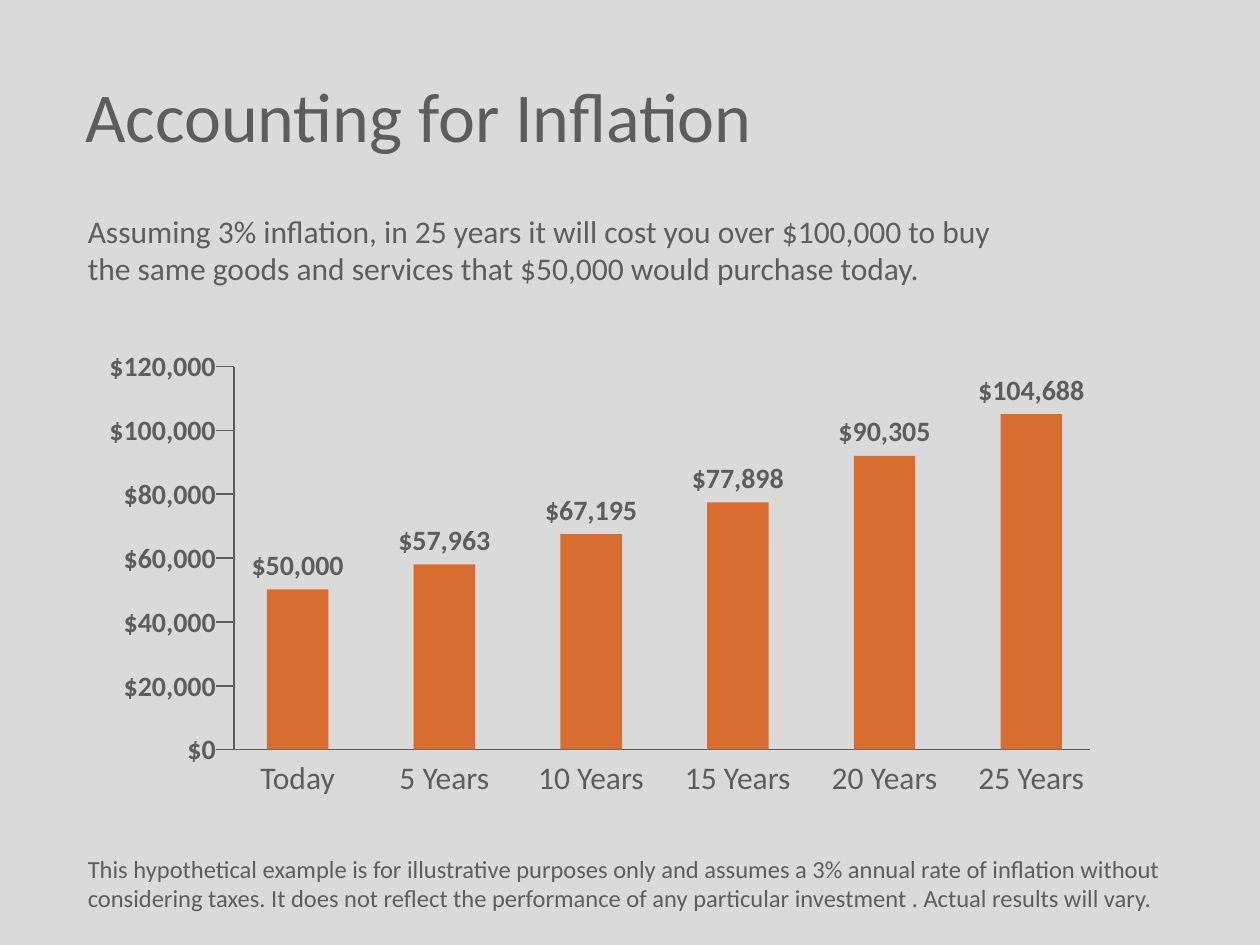
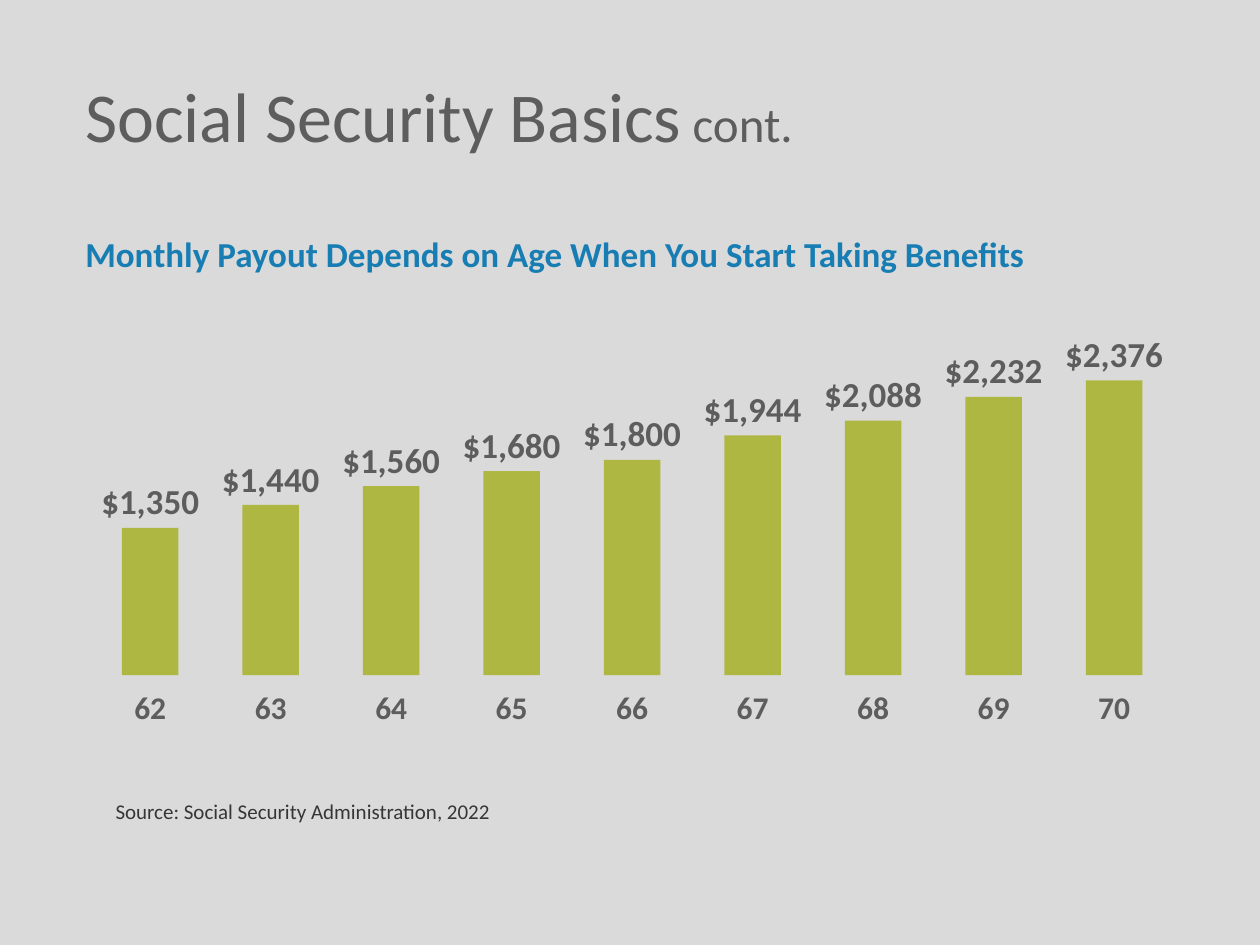
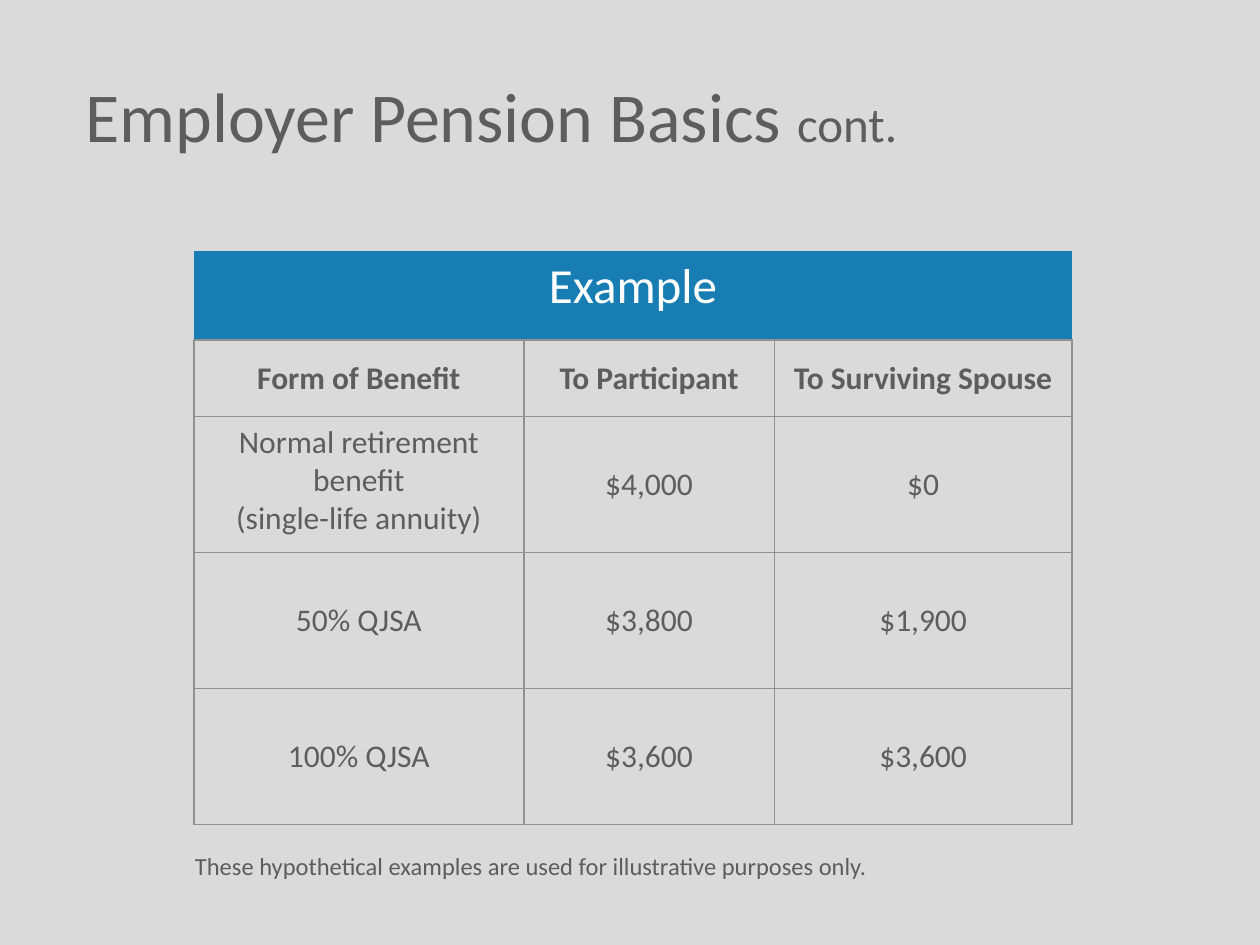
from dataclasses import dataclass

from lxml import etree
from pptx import Presentation
from pptx import util as u
from pptx.dml.color import RGBColor
from pptx.enum import shapes, text
from pptx.oxml import ns

FONT = "Calibri"
GREY = RGBColor(0x5D, 0x5D, 0x5D)
DARK = RGBColor(0x36, 0x36, 0x36)
BLUE = RGBColor(0x17, 0x7D, 0xB3)
ORANGE = RGBColor(0xD7, 0x6D, 0x31)
GREEN = RGBColor(0xAF, 0xB7, 0x43)
WHITE = RGBColor(0xFF, 0xFF, 0xFF)
BORDER = RGBColor(0x91, 0x91, 0x91)
BACKGROUND = RGBColor(0xDA, 0xDA, 0xDA)

LEFT, CENTER, RIGHT = text.PP_ALIGN.LEFT, text.PP_ALIGN.CENTER, text.PP_ALIGN.RIGHT

COSTS = [
    ("Today", "$50,000", 3.23),
    ("5 Years", "$57,963", 3.73),
    ("10 Years", "$67,195", 4.34),
    ("15 Years", "$77,898", 4.98),
    ("20 Years", "$90,305", 5.92),
    ("25 Years", "$104,688", 6.76),
]
PAYOUTS = [
    ("62", "$1,350", 2.97),
    ("63", "$1,440", 3.43),
    ("64", "$1,560", 3.81),
    ("65", "$1,680", 4.11),
    ("66", "$1,800", 4.34),
    ("67", "$1,944", 4.83),
    ("68", "$2,088", 5.13),
    ("69", "$2,232", 5.61),
    ("70", "$2,376", 5.94),
]
BENEFITS = [
    ("Form of Benefit", "To Participant", "To Surviving Spouse"),
    ("Normal retirement benefit\n(single-life annuity)", "$4,000", "$0"),
    ("50% QJSA", "$3,800", "$1,900"),
    ("100% QJSA", "$3,600", "$3,600"),
]


@dataclass
class BarStyle:
    color: RGBColor
    first: float
    last: float
    width: float
    base: float
    value_size: int
    value_lift: float
    caption_top: float
    caption_bold: bool


COST_STYLE = BarStyle(ORANGE, 5.38, 20.17, 1.24, 15.11, 16, 0.97, 15.16, False)
PAYOUT_STYLE = BarStyle(GREEN, 2.46, 21.89, 1.14, 13.61, 20, 1.09, 13.75, True)


def set_font(font, size, color=GREY, bold=False):
    font.name = FONT
    font.size = u.Pt(size)
    font.bold = bold
    font.color.rgb = color


def add_text(page, words, left, top, width, height, size,
             color=GREY, bold=False, align=LEFT):
    box = page.shapes.add_textbox(u.Cm(left), u.Cm(top), u.Cm(width), u.Cm(height))
    box.text_frame.word_wrap = True
    para = box.text_frame.paragraphs[0]
    para.text = words
    para.alignment = align
    set_font(para.font, size, color, bold)
    return box


def add_page(deck, title, suffix=""):
    page = deck.slides.add_slide(deck.slide_layouts[6])
    box = add_text(page, title, 1.47, 1.47, 25.4, 1.68, 40)
    box.text_frame.vertical_anchor = text.MSO_ANCHOR.MIDDLE
    if suffix:
        span = box.text_frame.paragraphs[0].add_run()
        span.text = suffix
        span.font.size = u.Pt(28)
    return page


def add_line(page, x1, y1, x2, y2):
    line = page.shapes.add_connector(
        shapes.MSO_CONNECTOR.STRAIGHT, u.Cm(x1), u.Cm(y1), u.Cm(x2), u.Cm(y2))
    line.line.color.rgb = GREY
    line.line.width = u.Pt(1)
    etree.SubElement(line._element.spPr, ns.qn("a:effectLst"))


def add_bars(page, entries, style):
    pitch = (style.last - style.first) / (len(entries) - 1)
    label_width = 3.2 if style.value_size == 16 else 2.5
    for index, (caption, value, height) in enumerate(entries):
        left = style.first + index * pitch
        top = style.base - height
        bar = page.shapes.add_shape(
            shapes.MSO_SHAPE.RECTANGLE,
            u.Cm(left), u.Cm(top), u.Cm(style.width), u.Cm(height))
        bar.shadow.inherit = False
        bar.fill.solid()
        bar.fill.fore_color.rgb = style.color
        bar.line.fill.background()
        label_left = left + (style.width - label_width) / 2
        add_text(page, value, label_left, top - style.value_lift, label_width, 0.94,
                 style.value_size, bold=True, align=CENTER)
        add_text(page, caption, label_left, style.caption_top, label_width, 1.02,
                 18, bold=style.caption_bold, align=CENTER)


def add_cost_axes(page):
    axis, top, base, steps = 4.72, 7.39, 15.11, 6
    add_line(page, axis, base, 21.97, base)
    add_line(page, axis, base, axis, top)
    for step in range(steps + 1):
        y = base - step * (base - top) / steps
        add_line(page, axis - 0.36, y, axis, y)
        add_text(page, f"${step * 20000:,}", 1.4, y - 0.48, 3.2, 0.94,
                 16, bold=True, align=RIGHT)


def set_borders(cell, visible):
    properties = cell._tc.get_or_add_tcPr()
    for side in "LRTB":
        line = etree.SubElement(properties, ns.qn(f"a:ln{side}"), w=str(u.Pt(1)))
        if side in visible:
            fill = etree.SubElement(line, ns.qn("a:solidFill"))
            etree.SubElement(fill, ns.qn("a:srgbClr"), val=str(BORDER))
        else:
            etree.SubElement(line, ns.qn("a:noFill"))


def fill_cell(cell, words, size, color, bold, anchor):
    cell.text = words
    cell.vertical_anchor = anchor
    for para in cell.text_frame.paragraphs:
        para.alignment = CENTER
        set_font(para.font, size, color, bold)


def add_benefit_table(page):
    widths = (6.65, 5.05, 6.0)
    heights = (1.8, 1.55, 2.74, 2.74, 2.74)
    table = page.shapes.add_table(
        len(heights), len(widths), u.Cm(3.91), u.Cm(5.05),
        u.Cm(sum(widths)), u.Cm(sum(heights))).table
    table.first_row = table.horz_banding = False
    for column, width in zip(table.columns, widths):
        column.width = u.Cm(width)
    for row, height in zip(table.rows, heights):
        row.height = u.Cm(height)

    heading = table.cell(0, 0)
    heading.merge(table.cell(0, len(widths) - 1))
    fill_cell(heading, "Example", 28, WHITE, False, text.MSO_ANCHOR.TOP)
    for cell in table.rows[0].cells:
        set_borders(cell, "B")
        cell.fill.solid()
        cell.fill.fore_color.rgb = BLUE

    for row_index, entries in enumerate(BENEFITS, start=1):
        for column_index, words in enumerate(entries):
            cell = table.cell(row_index, column_index)
            anchor = text.MSO_ANCHOR.TOP if "\n" in words else text.MSO_ANCHOR.MIDDLE
            fill_cell(cell, words, 18, GREY, row_index == 1, anchor)
            set_borders(cell, "LRTB")
            cell.fill.background()


def build_inflation(deck):
    page = add_page(deck, "Accounting for Inflation")
    add_text(page, "Assuming 3% inflation, in 25 years it will cost you over $100,000 "
             "to buy the same goods and services that $50,000 would purchase today.",
             1.52, 4.14, 18.95, 2.74, 18)
    add_cost_axes(page)
    add_bars(page, COSTS, COST_STYLE)
    add_text(page, "This hypothetical example is for illustrative purposes only and "
             "assumes a 3% annual rate of inflation without considering taxes. It does "
             "not reflect the performance of any particular investment . Actual "
             "results will vary.", 1.52, 17.09, 23.06, 1.45, 14)


def build_social_security(deck):
    page = add_page(deck, "Social Security Basics", " cont.")
    add_text(page, "Monthly Payout Depends on Age When You Start Taking Benefits",
             1.47, 4.57, 20.7, 1.12, 20, BLUE, True)
    add_bars(page, PAYOUTS, PAYOUT_STYLE)
    add_text(page, "Source: Social Security Administration, 2022",
             2.08, 15.98, 18.69, 0.76, 12, DARK)


def build_pension(deck):
    page = add_page(deck, "Employer Pension Basics ", "cont.")
    add_benefit_table(page)
    add_text(page, "These hypothetical examples are used for illustrative purposes only.",
             3.68, 17.04, 14.5, 0.86, 14)


def main():
    deck = Presentation()
    deck.slide_width, deck.slide_height = u.Cm(25.4), u.Cm(19.05)
    background = deck.slide_master.background.fill
    background.solid()
    background.fore_color.rgb = BACKGROUND
    build_inflation(deck)
    build_social_security(deck)
    build_pension(deck)
    deck.save("out.pptx")


if __name__ == "__main__":
    main()
